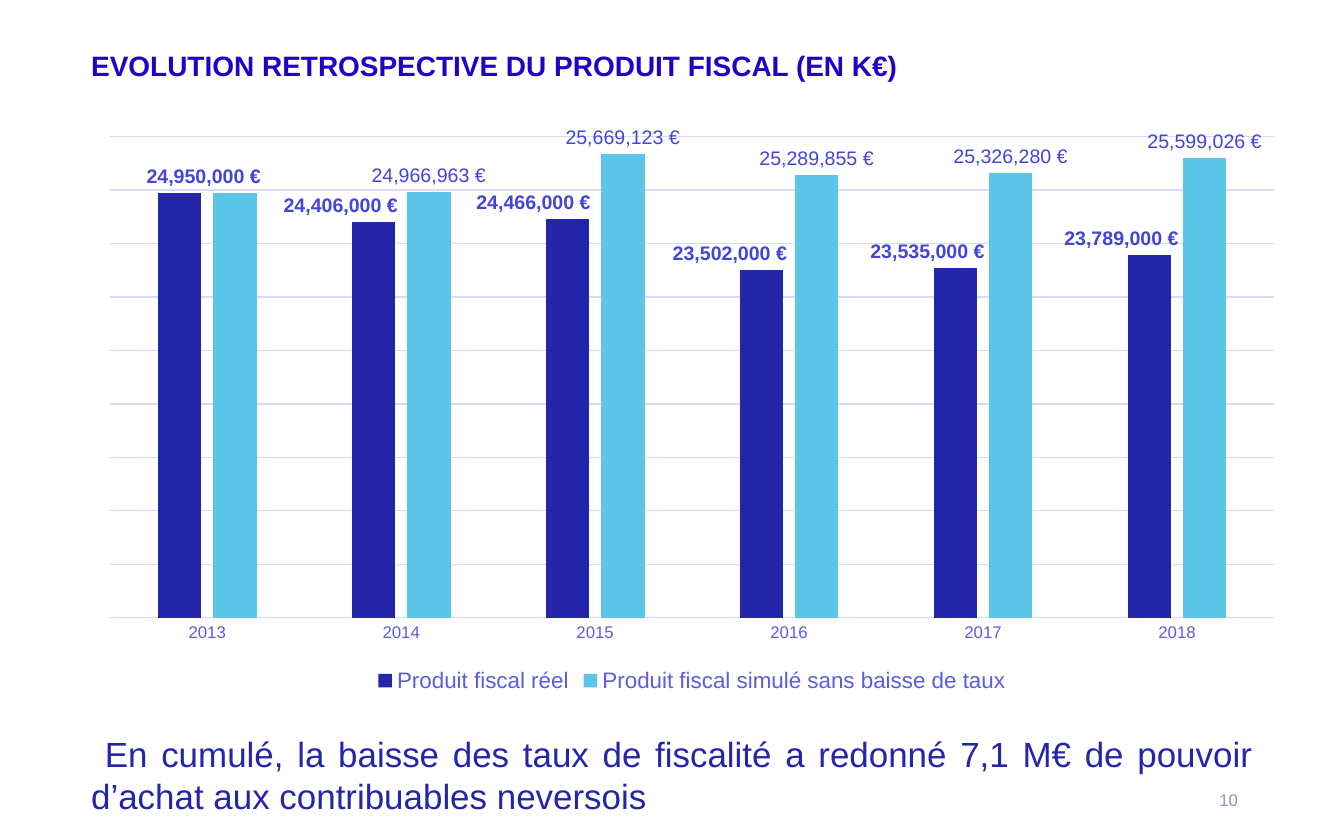
from dataclasses import dataclass

import pptx
import pptx.chart.data
import pptx.dml.color
import pptx.enum.chart
import pptx.enum.text
import pptx.oxml
import pptx.oxml.ns
import pptx.util

SLIDE_WIDTH, SLIDE_HEIGHT = 10, 6.25
FONT = "Arial"
EURO_FORMAT = '#,##0\\ "€"'
COLOURS = {
    "title": "2300C8",
    "navy": "2426A9",
    "sky": "5BC6E8",
    "label": "4245D7",
    "axis": "5C5DDC",
    "grid": "D9DAF7",
    "number": "8E8EC3",
}
YEARS = ["2013", "2014", "2015", "2016", "2017", "2018"]
# Inner plot area, as shares of the chart
PLOT_AREA = {"x": 0.02, "y": 0.02, "w": 0.96, "h": 0.84}
Align = pptx.enum.text.PP_ALIGN
Anchor = pptx.enum.text.MSO_ANCHOR


@dataclass
class Box:
    """Left, top, width and height as shares of the slide."""
    left: float
    top: float
    width: float
    height: float

    def lengths(self) -> list[int]:
        return [pptx.util.Inches(share * side) for share, side in (
            (self.left, SLIDE_WIDTH), (self.top, SLIDE_HEIGHT),
            (self.width, SLIDE_WIDTH), (self.height, SLIDE_HEIGHT))]


@dataclass
class Caption:
    text: str
    box: Box
    size: float
    colour: str
    bold: bool = False
    align: Align = Align.LEFT
    anchor: Anchor = Anchor.TOP


@dataclass
class TaxSeries:
    name: str
    values: list[int]
    colour: str
    bold: bool
    label_shifts: dict[int, float]  # share of the chart's width, by point
    hidden_labels: tuple[int, ...] = ()


CAPTIONS = [
    Caption("EVOLUTION RETROSPECTIVE DU PRODUIT FISCAL (EN K€)",
            Box(0.058, 0.05, 0.902, 0.086), 15, "title", bold=True),
    Caption("10", Box(0.706, 0.926, 0.225, 0.053), 9, "number",
            align=Align.RIGHT, anchor=Anchor.MIDDLE),
    Caption(" En cumulé, la baisse des taux de fiscalité a redonné 7,1 M€ "
            "de pouvoir d’achat aux contribuables neversois",
            Box(0.058, 0.864, 0.884, 0.117), 18.7, "navy", align=Align.JUSTIFY),
]
CHART_BOX = Box(0.064, 0.149, 0.902, 0.682)
SERIES = [
    TaxSeries("Produit fiscal réel",
              [24950000, 24406000, 24466000, 23502000, 23535000, 23789000],
              "navy", True,
              {0: 0.02, 1: -0.027, 2: -0.028, 3: -0.026, 4: -0.023, 5: -0.023}),
    TaxSeries("Produit fiscal simulé sans baisse de taux",
              [24950000, 24966963, 25669123, 25289855, 25326280, 25599026],
              "sky", False, {}, hidden_labels=(0,)),
]


def rgb(name: str) -> pptx.dml.color.RGBColor:
    return pptx.dml.color.RGBColor.from_string(COLOURS[name])


def style_font(font, size: float, colour: str, bold: bool = False) -> None:
    font.name, font.size, font.bold = FONT, pptx.util.Pt(size), bold
    font.color.rgb = rgb(colour)


def style_line(line) -> None:
    line.color.rgb = rgb("grid")
    line.width = pptx.util.Pt(0.75)


def chart_xml(markup: str):
    return pptx.oxml.parse_xml(
        markup.replace(">", f" {pptx.oxml.ns.nsdecls('c')}>", 1))


def manual_layout(inner: str):
    return chart_xml(f"<c:layout><c:manualLayout>{inner}</c:manualLayout></c:layout>")


def add_caption(slide, caption: Caption) -> None:
    frame = slide.shapes.add_textbox(*caption.box.lengths()).text_frame
    frame.word_wrap = True
    frame.vertical_anchor = caption.anchor
    frame.text = caption.text
    paragraph = frame.paragraphs[0]
    paragraph.alignment = caption.align
    style_font(paragraph.runs[0].font, caption.size, caption.colour, caption.bold)


def style_series(bars, tax: TaxSeries) -> None:
    bars.format.fill.solid()
    bars.format.fill.fore_color.rgb = rgb(tax.colour)
    bars.invert_if_negative = False
    outside = pptx.enum.chart.XL_LABEL_POSITION.OUTSIDE_END
    labels = bars.data_labels
    labels.show_value = True
    labels.number_format, labels.number_format_is_linked = EURO_FORMAT, False
    labels.position = outside
    style_font(labels.font, 10.5, "label", tax.bold)

    for point, shift in tax.label_shifts.items():
        label = bars.points[point].data_label
        style_font(label.font, 10.5, "label", tax.bold)
        label.position = outside
        index = bars._element.xpath(f"c:dLbls/c:dLbl/c:idx[@val='{point}']")[0]
        number_format = chart_xml('<c:numFmt sourceLinked="0"></c:numFmt>')
        number_format.set("formatCode", EURO_FORMAT)
        index.addnext(number_format)
        index.addnext(manual_layout(f'<c:x val="{shift}"/><c:y val="0"/>'))
    for point in reversed(tax.hidden_labels):
        labels._element.insert(0, chart_xml(
            f'<c:dLbl><c:idx val="{point}"/><c:delete val="1"/></c:dLbl>'))


def place_plot_area(chart) -> None:
    plot_area = chart._chartSpace.xpath("c:chart/c:plotArea")[0]
    for automatic in plot_area.xpath("c:layout"):
        plot_area.remove(automatic)
    plot_area.insert(0, manual_layout(
        '<c:layoutTarget val="inner"/><c:xMode val="edge"/><c:yMode val="edge"/>'
        + "".join(f'<c:{key} val="{share}"/>' for key, share in PLOT_AREA.items())))


def add_tax_chart(slide) -> None:
    data = pptx.chart.data.CategoryChartData(number_format=EURO_FORMAT)
    data.categories = YEARS
    for tax in SERIES:
        data.add_series(tax.name, tax.values)
    chart = slide.shapes.add_chart(
        pptx.enum.chart.XL_CHART_TYPE.COLUMN_CLUSTERED,
        *CHART_BOX.lengths(), data).chart
    chart.has_title = False
    style_font(chart.font, 10, "navy")
    place_plot_area(chart)

    chart.has_legend = True
    chart.legend.position = pptx.enum.chart.XL_LEGEND_POSITION.BOTTOM
    chart.legend.include_in_layout = False
    style_font(chart.legend.font, 12, "axis")

    years = chart.category_axis
    years.major_tick_mark = pptx.enum.chart.XL_TICK_MARK.NONE
    style_font(years.tick_labels.font, 9, "axis")
    style_line(years.format.line)

    euros = chart.value_axis
    euros.visible = False
    euros.minimum_scale, euros.maximum_scale = 17_000_000, 26_000_000
    euros.major_unit = 1_000_000
    euros.has_major_gridlines = True
    style_line(euros.major_gridlines.format.line)

    plot = chart.plots[0]
    plot.gap_width, plot.overlap, plot.vary_by_categories = 219, -27, False
    for bars, tax in zip(plot.series, SERIES):
        style_series(bars, tax)


def main() -> None:
    deck = pptx.Presentation()
    deck.slide_width = pptx.util.Inches(SLIDE_WIDTH)
    deck.slide_height = pptx.util.Inches(SLIDE_HEIGHT)
    slide = deck.slides.add_slide(deck.slide_layouts[6])
    for caption in CAPTIONS:
        add_caption(slide, caption)
    add_tax_chart(slide)
    deck.save("out.pptx")


if __name__ == "__main__":
    main()
